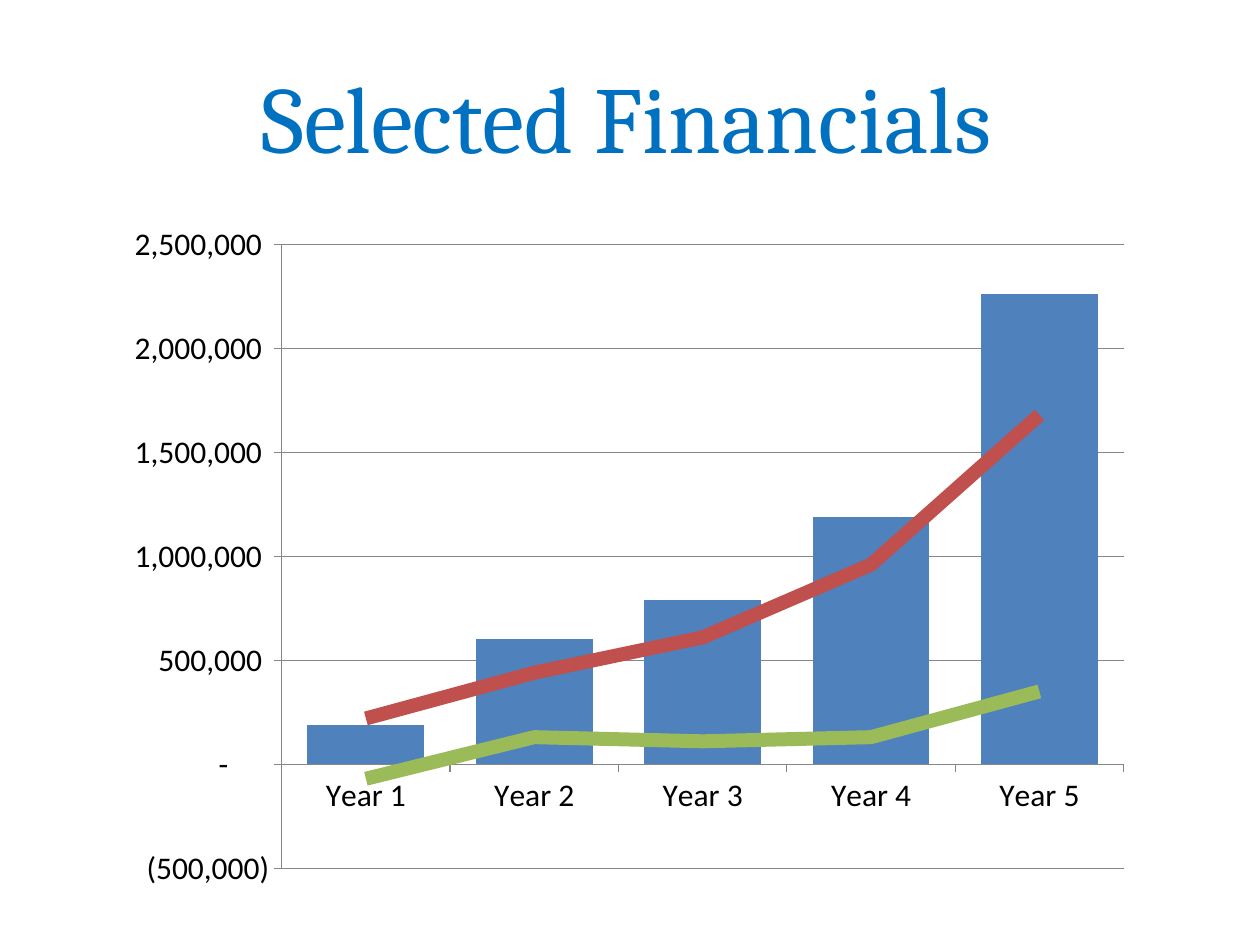
from dataclasses import dataclass

from lxml import etree
from pptx import Presentation
from pptx.chart.chart import Chart
from pptx.chart.data import CategoryChartData
from pptx.dml.color import RGBColor
from pptx.enum.chart import XL_CHART_TYPE, XL_MARKER_STYLE, XL_TICK_MARK
from pptx.enum.text import MSO_ANCHOR, PP_ALIGN
from pptx.oxml import parse_xml
from pptx.oxml.ns import nsdecls, qn
from pptx.slide import Slide
from pptx.util import Pt

COLUMN_CLUSTERED = XL_CHART_TYPE.COLUMN_CLUSTERED
NO_MARKER = XL_MARKER_STYLE.NONE
TICK_OUTSIDE, TICK_NONE = XL_TICK_MARK.OUTSIDE, XL_TICK_MARK.NONE
MIDDLE = MSO_ANCHOR.MIDDLE
CENTER = PP_ALIGN.CENTER


@dataclass(frozen=True)
class Theme:
    title_font: str = "Cambria"
    chart_font: str = "Calibri"
    title_size: float = 54
    chart_size: float = 18
    title_color: str = "0070C0"
    text_color: str = "000000"
    axis_color: str = "868686"
    axis_width: float = 0.75
    trend_width: float = 8


@dataclass(frozen=True)
class Box:
    left: float
    top: float
    width: float
    height: float

    def lengths(self) -> tuple[Pt, ...]:
        return Pt(self.left), Pt(self.top), Pt(self.width), Pt(self.height)


@dataclass(frozen=True)
class Measure:
    name: str
    values: tuple[int, ...]
    color: str


THEME = Theme()
YEARS = [f"Year {number}" for number in range(1, 6)]
COLUMNS = Measure("Series 1", (190000, 600000, 790000, 1190000, 2260000), "4F81BD")
TRENDS = (
    Measure("Series 2", (220000, 440000, 610000, 960000, 1680000), "C0504D"),
    Measure("Series 3", (-70000, 130000, 110000, 130000, 350000), "9BBB59"),
)
NUMBER_FORMAT = r'_(* #,##0_);_(* \(#,##0\);_(* "-"??_);_('
PLOT_LAYOUT = {"x": 0.17, "y": 0.05, "w": 0.81, "h": 0.9}


def add_text(slide: Slide, text: str, box: Box, *, font: str, size: float, color: str) -> None:
    shape = slide.shapes.add_textbox(*box.lengths())
    frame = shape.text_frame
    frame.word_wrap = True
    frame.vertical_anchor = MIDDLE
    paragraph = frame.paragraphs[0]
    paragraph.alignment = CENTER
    run = paragraph.add_run()
    run.text = text
    run.font.name = font
    run.font.size = Pt(size)
    run.font.color.rgb = RGBColor.from_string(color)


def style_line(line, color: str, width: float) -> None:
    line.color.rgb = RGBColor.from_string(color)
    line.width = Pt(width)


def move_trends_to_lines(chart: Chart) -> None:
    bar_chart = chart.plots[0]._element
    line_chart = parse_xml(
        f'<c:lineChart {nsdecls("c")}><c:grouping val="standard"/><c:varyColors val="0"/></c:lineChart>'
    )
    for series in bar_chart.findall(qn("c:ser"))[1:]:
        for flag in series.findall(qn("c:invertIfNegative")):
            series.remove(flag)
        line_chart.append(series)
    etree.SubElement(line_chart, qn("c:marker")).set("val", "1")
    for axis in bar_chart.findall(qn("c:axId")):
        etree.SubElement(line_chart, qn("c:axId")).set("val", axis.get("val"))
    bar_chart.addnext(line_chart)


def set_plot_layout(chart: Chart) -> None:
    plot_area = chart.plots[0]._element.getparent()
    for layout in plot_area.findall(qn("c:layout")):
        plot_area.remove(layout)
    layout = etree.Element(qn("c:layout"))
    manual = etree.SubElement(layout, qn("c:manualLayout"))
    settings = {"layoutTarget": "inner", "xMode": "edge", "yMode": "edge", **PLOT_LAYOUT}
    for name, value in settings.items():
        etree.SubElement(manual, qn(f"c:{name}")).set("val", str(value))
    plot_area.insert(0, layout)


def style_axes(chart: Chart) -> None:
    value_axis = chart.value_axis
    value_axis.minimum_scale = -500000
    value_axis.maximum_scale = 2500000
    value_axis.major_unit = 500000
    value_axis.has_major_gridlines = True
    value_axis.tick_labels.number_format = NUMBER_FORMAT
    value_axis.tick_labels.number_format_is_linked = False
    style_line(value_axis.major_gridlines.format.line, THEME.axis_color, THEME.axis_width)
    for axis in (chart.category_axis, value_axis):
        axis.major_tick_mark = TICK_OUTSIDE
        axis.minor_tick_mark = TICK_NONE
        style_line(axis.format.line, THEME.axis_color, THEME.axis_width)


def add_financial_chart(slide: Slide, box: Box) -> None:
    data = CategoryChartData()
    data.categories = YEARS
    for measure in (COLUMNS, *TRENDS):
        data.add_series(measure.name, measure.values)
    chart = slide.shapes.add_chart(COLUMN_CLUSTERED, *box.lengths(), data).chart
    chart.has_title = False
    chart.has_legend = False
    chart.font.name = THEME.chart_font
    chart.font.size = Pt(THEME.chart_size)
    chart.font.color.rgb = RGBColor.from_string(THEME.text_color)
    style_axes(chart)
    set_plot_layout(chart)
    move_trends_to_lines(chart)

    column_plot, line_plot = chart.plots
    column_plot.gap_width = 44
    column_plot.vary_by_categories = False
    fill = column_plot.series[0].format.fill
    fill.solid()
    fill.fore_color.rgb = RGBColor.from_string(COLUMNS.color)
    for series, trend in zip(line_plot.series, TRENDS):
        style_line(series.format.line, trend.color, THEME.trend_width)
        series.marker.style = NO_MARKER
        series.smooth = False


def main() -> None:
    presentation = Presentation()
    presentation.slide_width, presentation.slide_height = Pt(720), Pt(540)
    slide = presentation.slides.add_slide(presentation.slide_layouts[6])
    add_financial_chart(slide, Box(60, 120, 594, 396))
    add_text(slide, "Selected Financials", Box(-2, 30, 720, 72),
             font=THEME.title_font, size=THEME.title_size, color=THEME.title_color)
    presentation.save("out.pptx")


if __name__ == "__main__":
    main()
